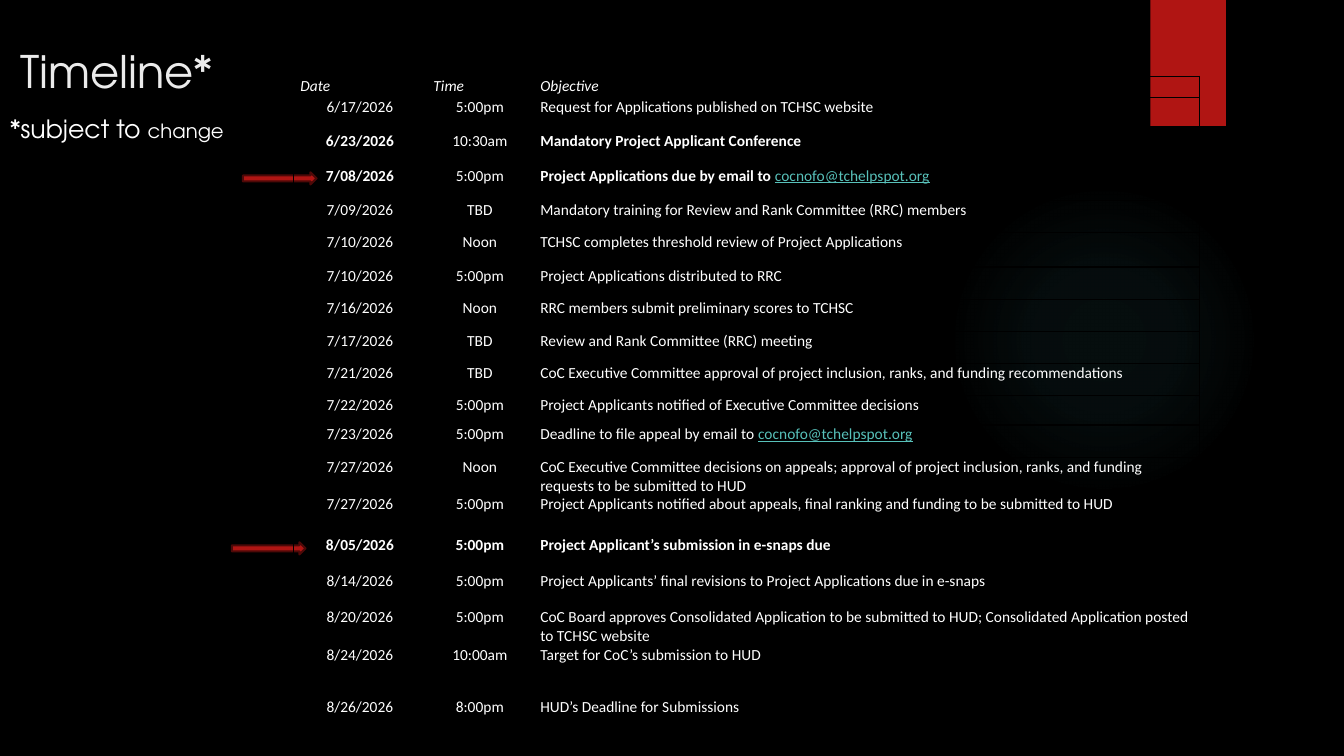
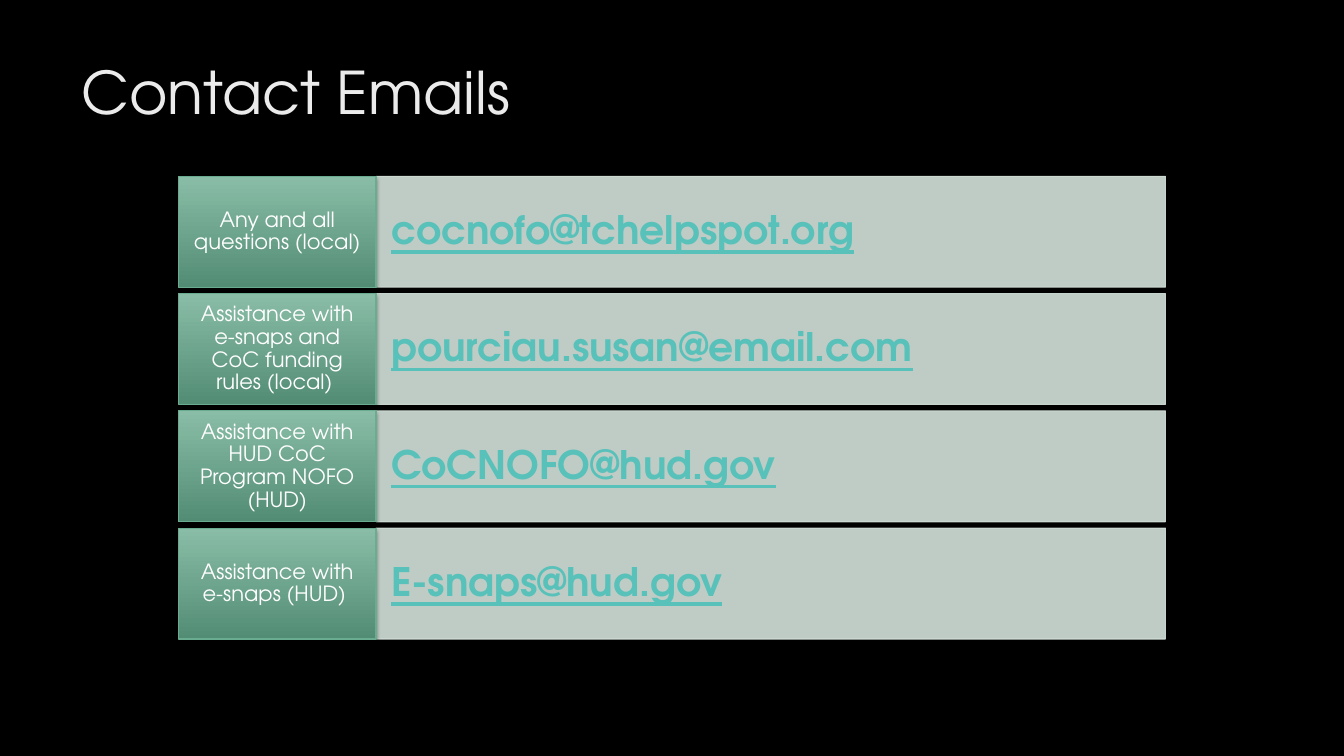
from lxml.etree import SubElement
from pptx import Presentation
from pptx.dml.color import RGBColor
from pptx.enum.shapes import MSO_SHAPE
from pptx.enum.text import MSO_ANCHOR, PP_ALIGN
from pptx.oxml.ns import qn
from pptx.util import Inches, Pt

COLORS = {
    "background": "000000",
    "title": "EBEBEB",
    "text": "FFFFFF",
    "link": "58C1BA",
    "accent": "B01513",
    "arrow_line": "4D0908",
    "glow": "50B9C1",
    "panel": "D4E3DB",
    "label_top": "89BDA7",
    "label_bottom": "538C74",
    "label_line": "6AAC90",
}
HEADING_FONT = "TeX Gyre Adventor"
TABLE_FONT = "Calibri"
EMAIL = "cocnofo@tchelpspot.org"

TIMELINE_COLUMNS = (1.32, 1.06, 6.61)
TIMELINE_HEADER = ("Date", "Time", "Objective")
HEADER_HEIGHT = 0.21
TIMELINE = [
    (0.34, "6/17/2026", "5:00pm", "Request for Applications published on TCHSC website"),
    (0.34, "6/23/2026", "10:30am", "Mandatory Project Applicant Conference"),
    (0.34, "7/08/2026", "5:00pm", f"Project Applications due by email to {EMAIL}"),
    (0.32, "7/09/2026", "TBD", "Mandatory training for Review and Rank Committee (RRC) members"),
    (0.34, "7/10/2026", "Noon", "TCHSC completes threshold review of Project Applications"),
    (0.32, "7/10/2026", "5:00pm", "Project Applications distributed to RRC"),
    (0.32, "7/16/2026", "Noon", "RRC members submit preliminary scores to TCHSC"),
    (0.32, "7/17/2026", "TBD", "Review and Rank Committee (RRC) meeting"),
    (0.32, "7/21/2026", "TBD", "CoC Executive Committee approval of project inclusion, ranks, "
     "and funding recommendations"),
    (0.29, "7/22/2026", "5:00pm", "Project Applicants notified of Executive Committee decisions"),
    (0.32, "7/23/2026", "5:00pm", f"Deadline to file appeal by email to {EMAIL}"),
    (0.36, "7/27/2026", "Noon", "CoC Executive Committee decisions on appeals; approval of "
     "project inclusion, ranks, and funding requests to be submitted to HUD"),
    (0.41, "7/27/2026", "5:00pm", "Project Applicants notified about appeals, final ranking "
     "and funding to be submitted to HUD"),
    (0.36, "8/05/2026", "5:00pm", "Project Applicant’s submission in e-snaps due"),
    (0.36, "8/14/2026", "5:00pm", "Project Applicants’ final revisions to Project Applications "
     "due in e-snaps"),
    (0.32, "8/20/2026", "5:00pm", "CoC Board approves Consolidated Application to be submitted "
     "to HUD; Consolidated Application posted to TCHSC website"),
    (0.52, "8/24/2026", "10:00am", "Target for CoC’s submission to HUD"),
    (0.32, "8/26/2026", "8:00pm", "HUD’s Deadline for Submissions"),
]
BOLD_COLUMNS = {"6/23/2026": (0, 2), "7/08/2026": (0, 2), "8/05/2026": (0, 1, 2)}

CONTACTS = [
    ("Any and all questions (local)", EMAIL),
    ("Assistance with e-snaps and CoC funding rules (local) ", "pourciau.susan@email.com"),
    ("Assistance with HUD CoC Program NOFO (HUD)", "CoCNOFO@hud.gov"),
    ("Assistance with e-snaps (HUD) ", "E-snaps@hud.gov"),
]
CONTACTS_TOP, CONTACTS_BOTTOM, CONTACT_HEIGHT = 1.75, 6.34, 1.1


def rgb(color):
    return RGBColor.from_string(COLORS[color])


class Deck:
    def __init__(self):
        self.presentation = Presentation()
        self.presentation.slide_width = Inches(13.33)
        self.presentation.slide_height = Inches(7.5)
        self.slide = None

    def new_slide(self):
        self.slide = self.presentation.slides.add_slide(self.presentation.slide_layouts[6])
        fill = self.slide.background.fill
        fill.solid()
        fill.fore_color.rgb = rgb("background")

    def run(self, paragraph, text, size, color="text", font=HEADING_FONT,
            bold=False, italic=False, underline=False):
        run = paragraph.add_run()
        run.text = text
        run.font.size = Pt(size)
        run.font.name = font
        run.font.color.rgb = rgb(color)
        run.font.bold = bold
        run.font.italic = italic
        run.font.underline = underline

    def text(self, left, top, width, height, runs):
        frame = self.slide.shapes.add_textbox(
            Inches(left), Inches(top), Inches(width), Inches(height)).text_frame
        frame.word_wrap = True
        for text, size, color in runs:
            self.run(frame.paragraphs[0], text, size, color)

    def title(self, text, left, top, size):
        self.text(left, top, 10.29, 1.53, [(text, size, "title")])

    def shape(self, preset, left, top, width, height, fill=None, line=None, line_width=0.75):
        shape = self.slide.shapes.add_shape(
            preset, Inches(left), Inches(top), Inches(width), Inches(height))
        shape.shadow.inherit = False
        if fill:
            shape.fill.solid()
            shape.fill.fore_color.rgb = rgb(fill)
        else:
            shape.fill.background()
        if line:
            shape.line.color.rgb = rgb(line)
            shape.line.width = Pt(line_width)
        else:
            shape.line.fill.background()
        return shape

    def opacity(self, shape, percent):
        for color in shape.element.spPr.iter(qn("a:srgbClr")):
            SubElement(color, qn("a:alpha"), val=str(percent * 1000))

    def gradient(self, shape, stops, radial=False):
        properties = shape.element.spPr
        empty_fill = properties.find(qn("a:noFill"))
        gradient = SubElement(properties, qn("a:gradFill"), rotWithShape="1")
        stop_list = SubElement(gradient, qn("a:gsLst"))
        for position, color, percent in stops:
            stop = SubElement(stop_list, qn("a:gs"), pos=str(position * 1000))
            tint = SubElement(stop, qn("a:srgbClr"), val=COLORS[color])
            if percent < 100:
                SubElement(tint, qn("a:alpha"), val=str(percent * 1000))
        if radial:
            circle = SubElement(gradient, qn("a:path"), path="circle")
            SubElement(circle, qn("a:fillToRect"),
                       {side: "50000" for side in ("l", "t", "r", "b")})
        else:
            SubElement(gradient, qn("a:lin"), ang="5400000", scaled="0")
        properties.replace(empty_fill, gradient)

    def shadow(self, shape):
        effects = shape.element.spPr.find(qn("a:effectLst"))
        outer = SubElement(effects, qn("a:outerShdw"), blurRad=str(Pt(3)),
                           dist=str(Pt(2)), dir="5400000", rotWithShape="0")
        color = SubElement(outer, qn("a:srgbClr"), val=COLORS["background"])
        SubElement(color, qn("a:alpha"), val="45000")

    def glow(self):
        glow = self.shape(MSO_SHAPE.OVAL, 9.41, 1.83, 3.08, 3.08)
        self.gradient(glow, [(0, "glow", 7), (36, "glow", 6), (69, "glow", 0)], radial=True)

    def tab(self):
        self.shadow(self.shape(MSO_SHAPE.RECTANGLE, 11.41, 0, 0.75, 1.25, "accent"))

    def arrow(self, left, top):
        self.shape(MSO_SHAPE.RIGHT_ARROW, left, top, 0.73, 0.12, "accent", "arrow_line", 1.5)

    def shape_text(self, shape, text, size, align, inset_x, inset_y, **style):
        frame = shape.text_frame
        frame.word_wrap = True
        frame.vertical_anchor = MSO_ANCHOR.MIDDLE
        frame.margin_left = frame.margin_right = Inches(inset_x)
        frame.margin_top = frame.margin_bottom = Inches(inset_y)
        paragraph = frame.paragraphs[0]
        paragraph.alignment = align
        paragraph.line_spacing = 0.9
        self.run(paragraph, text, size, **style)

    def contact(self, top, purpose, address):
        panel = self.shape(MSO_SHAPE.RECTANGLE, 3.73, top, 7.83, CONTACT_HEIGHT,
                           "panel", "panel")
        self.opacity(panel, 90)
        self.shape_text(panel, address, 28, PP_ALIGN.LEFT, 0.15, 0.28,
                        color="link", bold=True, underline=True)
        label = self.shape(MSO_SHAPE.RECTANGLE, 1.77, top, 1.96, CONTACT_HEIGHT,
                           line="label_line")
        self.gradient(label, [(0, "label_top", 100), (100, "label_bottom", 100)])
        self.shadow(label)
        self.shape_text(label, purpose, 15, PP_ALIGN.CENTER, 0.1, 0.11)

    def cell(self, cell, text, centered=False, bold=False, italic=False):
        cell.margin_left = cell.margin_right = Inches(0.07)
        cell.margin_top = cell.margin_bottom = 0
        cell.fill.background()
        properties = cell._tc.get_or_add_tcPr()
        for position, side in enumerate(("lnL", "lnR", "lnT", "lnB")):
            border = SubElement(properties, qn(f"a:{side}"), w=str(Pt(1)))
            fill = SubElement(border, qn("a:solidFill"))
            SubElement(fill, qn("a:srgbClr"), val=COLORS["background"])
            properties.insert(position, border)
        paragraph = cell.text_frame.paragraphs[0]
        paragraph.alignment = PP_ALIGN.CENTER if centered else PP_ALIGN.LEFT
        plain, address, _ = text.partition(EMAIL)
        self.run(paragraph, plain, 11, font=TABLE_FONT, bold=bold, italic=italic)
        if address:
            self.run(paragraph, address, 11, "link", TABLE_FONT, underline=True)

    def timeline(self, left, top):
        heights = [HEADER_HEIGHT] + [entry[0] for entry in TIMELINE]
        table = self.slide.shapes.add_table(
            len(heights), len(TIMELINE_COLUMNS), Inches(left), Inches(top),
            Inches(sum(TIMELINE_COLUMNS)), Inches(sum(heights))).table
        table.first_row = table.horz_banding = False
        for column, width in zip(table.columns, TIMELINE_COLUMNS):
            column.width = Inches(width)
        for row, height in zip(table.rows, heights):
            row.height = Inches(height)
        for column, heading in enumerate(TIMELINE_HEADER):
            self.cell(table.cell(0, column), heading, italic=True)
        for row, (_, *entry) in enumerate(TIMELINE, 1):
            bold_columns = BOLD_COLUMNS.get(entry[0], ())
            for column, text in enumerate(entry):
                self.cell(table.cell(row, column), text, column < 2, column in bold_columns)


def main():
    deck = Deck()

    deck.new_slide()
    deck.glow()
    deck.tab()
    deck.title("Timeline*", 0.1, 0.38, 32)
    deck.text(0, 1.08, 2.64, 0.4, [("*subject to ", 18, "text"), ("change", 14, "text")])
    deck.arrow(2.41, 1.71)
    deck.arrow(2.3, 5.38)
    deck.timeline(2.91, 0.76)

    deck.new_slide()
    deck.title("Contact Emails", 0.71, 0.5, 42)
    pitch = (CONTACTS_BOTTOM - CONTACTS_TOP - CONTACT_HEIGHT) / (len(CONTACTS) - 1)
    for index, (purpose, address) in enumerate(CONTACTS):
        deck.contact(CONTACTS_TOP + index * pitch, purpose, address)

    deck.presentation.save("out.pptx")


if __name__ == "__main__":
    main()
